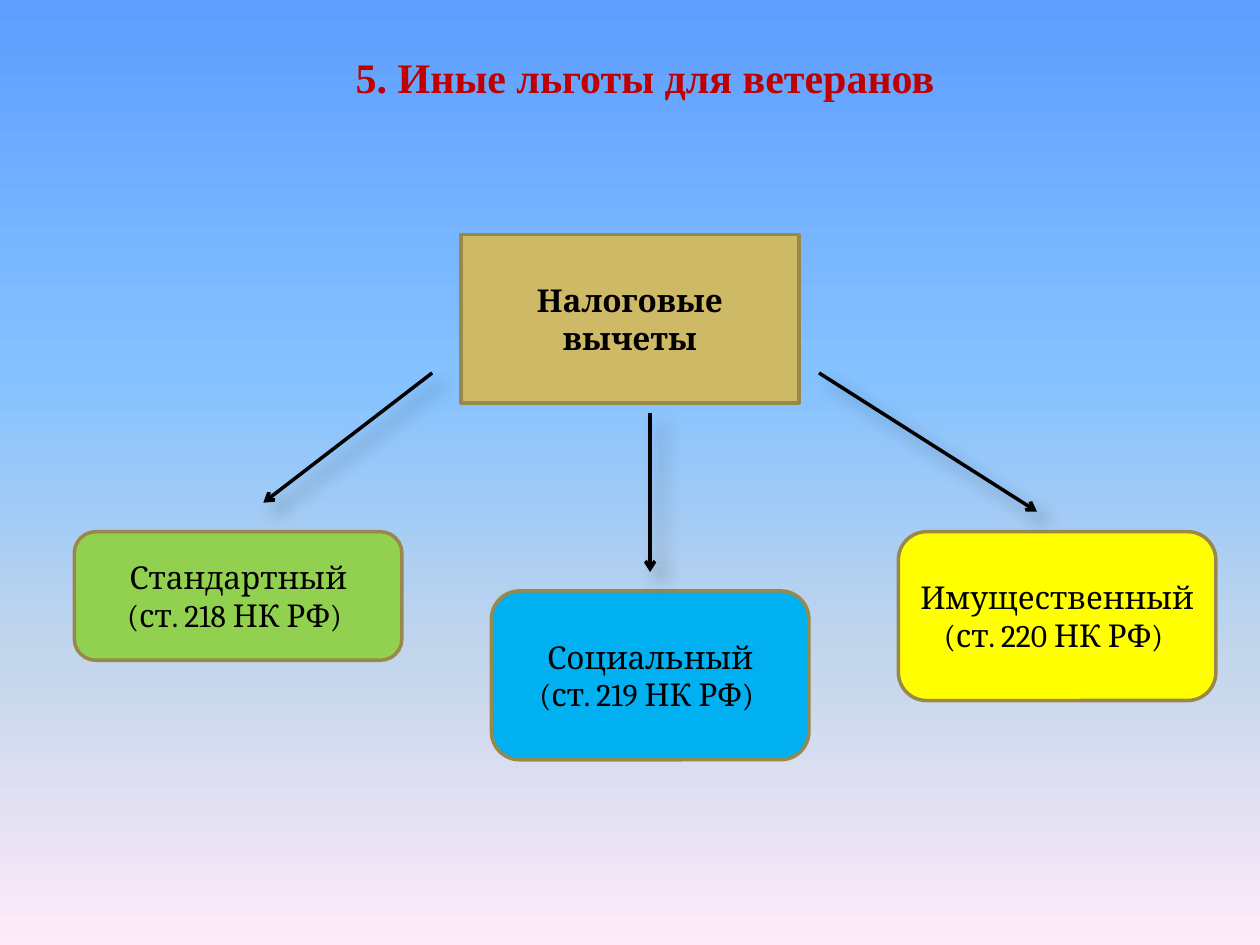
from lxml.etree import SubElement as Sub
from pptx import Presentation
from pptx.dml.color import RGBColor
from pptx.enum.shapes import MSO_CONNECTOR as Conn, MSO_SHAPE as Kind
from pptx.enum.text import MSO_ANCHOR as Anchor, PP_ALIGN as Align
from pptx.oxml.ns import qn
from pptx.util import Inches, Pt

SKY = [(0, "5E9EFF"), (40, "85C2FF"), (70, "C4D6EB"), (100, "FFEBFA")]
EDGE = "98894B"
CARDS = [
    ((0.59, 4.22, 2.6, 1.02), "92D050", "Стандартный\n(ст. 218 НК РФ) "),
    ((3.9, 4.69, 2.52, 1.34), "00B0F0", "Социальный\n(ст. 219 НК РФ) "),
    ((7.13, 4.22, 2.52, 1.34), "FFFF00", "Имущественный\n(ст. 220 НК РФ) "),
]
ARROWS = [
    (3.43, 2.96, 2.09, 3.99),
    (5.16, 3.28, 5.16, 4.54),
    (6.5, 2.96, 8.23, 4.06),
]


def color(code):
    return RGBColor.from_string(code)


def write(shape, text, size=18, font="Cambria", ink="000000", bold=False,
          anchor=Anchor.MIDDLE):
    frame = shape.text_frame
    frame.text = text
    frame.word_wrap = True
    frame.vertical_anchor = anchor
    for para in frame.paragraphs:
        para.alignment = Align.CENTER
        for run in para.runs:
            run.font.size = Pt(size)
            run.font.name = font
            run.font.bold = bold
            run.font.color.rgb = color(ink)


def paint_sky(slide):
    fill = slide.background.fill
    fill.gradient()
    fill.gradient_angle = 270
    stops = slide.element.find(".//" + qn("a:gsLst"))
    for stop in list(stops):
        stops.remove(stop)
    for pos, code in SKY:
        stop = Sub(stops, qn("a:gs"), pos=str(pos * 1000))
        Sub(stop, qn("a:srgbClr"), val=code)


def add_title(slide, text):
    title = slide.shapes.title
    title.left, title.top = Inches(1.22), Inches(0.36)
    title.width, title.height = Inches(7.8), Inches(0.5)
    write(title, text, size=24, font="Times New Roman", ink="C00000",
          bold=True, anchor=Anchor.TOP)


def add_box(slide, kind, place, fill, text, **style):
    box = slide.shapes.add_shape(kind, *map(Inches, place))
    box.shadow.inherit = False
    box.fill.solid()
    box.fill.fore_color.rgb = color(fill)
    box.line.color.rgb = color(EDGE)
    box.line.width = Pt(2)
    write(box, text, **style)


def add_arrow(slide, ends):
    """Draw an arrow with a soft shadow to its lower right."""
    arrow = slide.shapes.add_connector(Conn.STRAIGHT, *map(Inches, ends))
    arrow.line.color.rgb = color("000000")
    arrow.line.width = Pt(2)
    props = arrow.element.spPr
    Sub(props.find(qn("a:ln")), qn("a:tailEnd"), type="arrow")
    shade = Sub(Sub(props, qn("a:effectLst")), qn("a:outerShdw"),
                blurRad=str(Pt(10.2)), dist=str(Pt(8)), dir="2700000",
                algn="tl", rotWithShape="0")
    tone = Sub(shade, qn("a:srgbClr"), val="000000")
    Sub(tone, qn("a:alpha"), val="35000")


def main():
    deck = Presentation()
    deck.slide_width, deck.slide_height = Inches(10), Inches(7.5)
    slide = deck.slides.add_slide(deck.slide_layouts[5])
    paint_sky(slide)
    add_title(slide, "5. Иные льготы для ветеранов")
    add_box(slide, Kind.RECTANGLE, (3.66, 1.86, 2.68, 1.34), "CEB966",
            "Налоговые вычеты", bold=True)
    for place, fill, text in CARDS:
        add_box(slide, Kind.ROUNDED_RECTANGLE, place, fill, text)
    for ends in ARROWS:
        add_arrow(slide, ends)
    deck.save("out.pptx")


if __name__ == "__main__":
    main()
